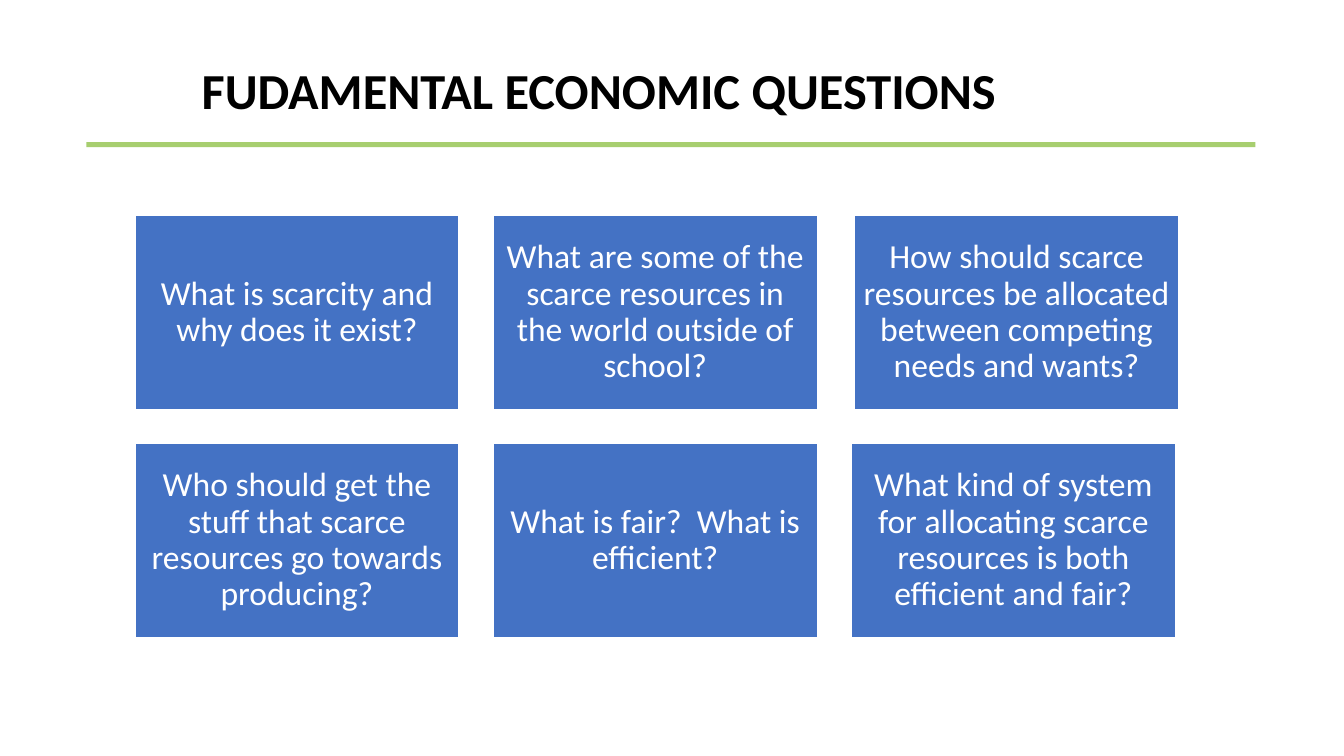
import pptx
import pptx.util
import pptx.dml.color
import pptx.enum.shapes
import pptx.enum.text

Cm = pptx.util.Cm
ASKS = [
    ["What is scarcity and why does it exist?",
     "What are some of the scarce resources in the world outside of school?",
     "How should scarce resources be allocated between competing needs and wants?"],
    ["Who should get the stuff that scarce resources go towards producing?",
     "What is fair?  What is efficient?",
     "What kind of system for allocating scarce resources is both efficient and fair?"],
]


def color(code):
    """Turn a hex string into a colour."""
    return pptx.dml.color.RGBColor.from_string(code)


def write(shape, text, size=24, tint="FFFFFF", bold=False, inset=0.25):
    """Put centred, formatted text into a shape."""
    frame = shape.text_frame
    frame.word_wrap = True
    frame.auto_size = pptx.enum.text.MSO_AUTO_SIZE.NONE
    frame.vertical_anchor = pptx.enum.text.MSO_ANCHOR.MIDDLE
    frame.margin_left = frame.margin_right = Cm(inset)
    frame.margin_top = frame.margin_bottom = Cm(inset)
    para = frame.paragraphs[0]
    para.alignment = pptx.enum.text.PP_ALIGN.CENTER
    para.line_spacing = 0.9
    run = para.add_run()
    run.text = text
    run.font.name = "Calibri"
    run.font.size = pptx.util.Pt(size)
    run.font.bold = bold
    run.font.color.rgb = color(tint)


def block(slide, left, top, width, height, fill, edge=None):
    """Add a flat rectangle, with an outline if asked."""
    kind = pptx.enum.shapes.MSO_SHAPE.RECTANGLE
    shape = slide.shapes.add_shape(kind, Cm(left), Cm(top), Cm(width), Cm(height))
    shape.shadow.inherit = False
    shape.fill.solid()
    shape.fill.fore_color.rgb = color(fill)
    if edge:
        shape.line.color.rgb = color(edge)
        shape.line.width = pptx.util.Pt(2)
    else:
        shape.line.fill.background()
    return shape


def header(slide, left, top, width, height):
    """Place the title and the green rule across its lower part."""
    block(slide, left + 2.18, top + 3.33, width - 1.02, 0.13, "A7CE6F")
    title = slide.shapes.title
    title.left, title.top = Cm(left), Cm(top)
    title.width, title.height = Cm(width), Cm(height)
    write(title, "FUDAMENTAL ECONOMIC QUESTIONS ", size=36, tint="000000",
          bold=True, inset=0.13)


def cards(slide, left, top, width, height, gap=0.82, nudge=0.08):
    """Fill the box with question cards, the top right one nudged."""
    rows, cols = len(ASKS), len(ASKS[0])
    wide = (width - gap * (cols - 1)) / cols
    high = (height - gap * (rows - 1)) / rows
    for row, line in enumerate(ASKS):
        for col, ask in enumerate(line):
            shift = nudge if (row, col) == (0, cols - 1) else 0
            card = block(slide, left + col * (wide + gap) + shift,
                         top + row * (high + gap), wide, high, "4472C4", "FFFFFF")
            write(card, ask)


def main():
    """Build and save the slide."""
    deck = pptx.Presentation()
    deck.slide_width, deck.slide_height = Cm(33.87), Cm(19.05)
    slide = deck.slides.add_slide(deck.slide_layouts[5])
    header(slide, 0, 0.25, 30.48, 4.19)
    cards(slide, 3.38, 5.41, 26.26, 10.67)
    deck.save("out.pptx")


if __name__ == "__main__":
    main()
